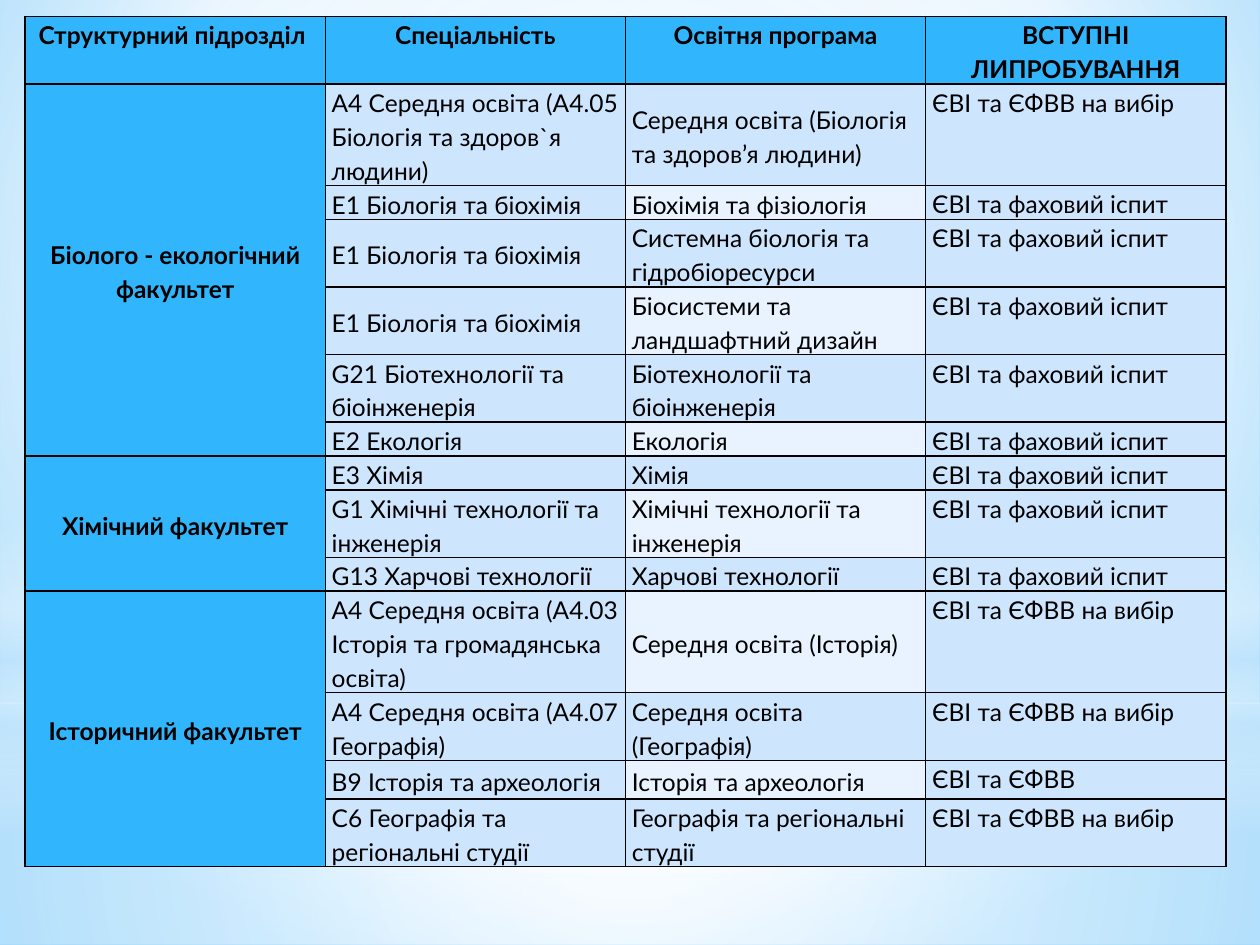
import lxml.etree
import pptx
import pptx.dml.color
import pptx.enum.shapes
import pptx.enum.text
import pptx.oxml
import pptx.oxml.ns
import pptx.util

Inches = pptx.util.Inches
SHAPE = pptx.enum.shapes.MSO_SHAPE
ANCHOR = pptx.enum.text.MSO_ANCHOR
ALIGN = pptx.enum.text.PP_ALIGN

HEADERS = ["Структурний підрозділ ", "Спеціальність", "Освітня програма", "ВСТУПНІ ЛИПРОБУВАННЯ"]
EXAM = "ЄВІ та фаховий іспит"
CHOICE = "ЄВІ та ЄФВВ на вибір"
# Faculty: (specialty, programme, entrance tests, text lines in the row)
FACULTIES = {
    "Біолого - екологічний факультет": [
        ("А4 Середня освіта (А4.05 Біологія та здоров`я людини)",
         "Середня освіта (Біологія та здоров’я людини)", CHOICE, 3),
        ("E1 Біологія та біохімія", "Біохімія та фізіологія", EXAM, 1),
        ("E1 Біологія та біохімія", "Системна біологія та гідробіоресурси", EXAM, 2),
        ("E1 Біологія та біохімія", "Біосистеми та ландшафтний дизайн", EXAM, 2),
        ("G21 Біотехнології та біоінженерія", "Біотехнології та біоінженерія", EXAM, 2),
        ("E2 Екологія", "Екологія", EXAM, 1),
    ],
    "Хімічний факультет": [
        ("E3 Хімія", "Хімія", EXAM, 1),
        ("G1 Хімічні технології та інженерія", "Хімічні технології та інженерія", EXAM, 2),
        ("G13 Харчові технології", "Харчові технології", EXAM, 1),
    ],
    "Історичний факультет": [
        ("А4 Середня освіта (А4.03 Історія та громадянська освіта)",
         "Середня освіта (Історія)", CHOICE, 3),
        ("А4 Середня освіта (А4.07 Географія)", "Середня освіта (Географія)", CHOICE, 2),
        ("В9 Історія та археологія", "Історія та археологія", "ЄВІ та ЄФВВ", 1.15),
        ("С6 Географія та регіональні студії", "Географія та регіональні студії", CHOICE, 2),
    ],
}
HEADER_LINES = 2
LEFT, TOP, WIDTH, HEIGHT = 0.2, 0.13, 9.53, 6.75
ACCENT, BAND, LIGHT_BAND, BLACK = "31B6FD", "CEE5FE", "E8F3FF", "000000"

# Gradient stops: (position %, colour, opacity %); focus: left, top, right, bottom %
CENTRE = (50, 50, 50, 50)
BACKGROUND = [(0, "B0E0FF", 100), (60, "FFFFFF", 100), (100, "6BC5FF", 100)]
GLOWS = [
    (SHAPE.RECTANGLE, 5.58, 1.92, CENTRE,
     [(0, "FFFFFF", 91), (37, "FFFFFF", 76), (100, "C6E7FC", 79)]),
    (SHAPE.RECTANGLE, 0, 5.58, CENTRE,
     [(0, "FFFFFF", 89), (48, "FFFFFF", 62), (100, "C6E7FC", 79)]),
    (SHAPE.RECTANGLE, 4.12, 2.5, None,
     [(0, "FFFFFF", 0), (29, "FFFFFF", 30), (45, "C6E7FC", 40),
      (55, "FFFFFF", 26), (65, "C6E7FC", 60), (100, "FFFFFF", 0)]),
    (SHAPE.OVAL, 1.75, 5.58, CENTRE, [(0, "FFFFFF", 100), (56, "FFFFFF", 0)]),
]


def rgb(colour):
    return pptx.dml.color.RGBColor.from_string(colour)


def set_gradient(fill, owner, stops, focus):
    """Fill with a circular gradient around focus, or a vertical one without focus."""
    fill.solid()
    fill.fore_color.rgb = rgb(stops[0][1])
    solid = owner.xpath(".//a:solidFill")[0]
    stop_xml = "".join(
        f'<a:gs pos="{pos * 1000}"><a:srgbClr val="{colour}">'
        f'<a:alpha val="{opacity * 1000}"/></a:srgbClr></a:gs>'
        for pos, colour, opacity in stops)
    if focus:
        sides = " ".join(f'{side}="{value * 1000}"' for side, value in zip("ltrb", focus))
        direction = f'<a:path path="circle"><a:fillToRect {sides}/></a:path>'
    else:
        direction = '<a:lin ang="5400000" scaled="0"/>'
    gradient = pptx.oxml.parse_xml(
        f'<a:gradFill {pptx.oxml.ns.nsdecls("a")} rotWithShape="1">'
        f'<a:gsLst>{stop_xml}</a:gsLst>{direction}</a:gradFill>')
    solid.getparent().replace(solid, gradient)


def set_borders(cell):
    properties = cell._tc.get_or_add_tcPr()
    for index, side in enumerate("LRTB"):
        properties.insert(index, pptx.oxml.parse_xml(
            f'<a:ln{side} {pptx.oxml.ns.nsdecls("a")} w="12700"><a:solidFill>'
            f'<a:srgbClr val="{BLACK}"/></a:solidFill></a:ln{side}>'))


def format_cell(cell, text, colour, heading=False, middle=True):
    cell.fill.solid()
    cell.fill.fore_color.rgb = rgb(colour)
    set_borders(cell)
    cell.margin_left = cell.margin_right = Inches(0.05)
    cell.margin_top = cell.margin_bottom = 0
    cell.vertical_anchor = ANCHOR.MIDDLE if middle else ANCHOR.TOP
    paragraph = cell.text_frame.paragraphs[0]
    paragraph.text = text
    paragraph.line_spacing = 1.15
    paragraph.alignment = ALIGN.CENTER if heading else ALIGN.LEFT
    paragraph.font.size = pptx.util.Pt(14)
    for run in paragraph.runs:
        run.font.name = "Lato"
        run.font.size = pptx.util.Pt(14)
        run.font.bold = heading
        run.font.color.rgb = rgb(BLACK)


def add_backdrop(slide):
    set_gradient(slide.background.fill, slide.background._cSld, BACKGROUND, (20, 10, 20, 60))
    for outline, top, height, focus, stops in GLOWS:
        glow = slide.shapes.add_shape(outline, 0, Inches(top), Inches(10), Inches(height))
        glow.shadow.inherit = False
        glow.line.fill.background()
        set_gradient(glow.fill, glow._element.spPr, stops, focus)


def add_admissions(slide):
    line_counts = [HEADER_LINES] + [row[-1] for rows in FACULTIES.values() for row in rows]
    admissions = slide.shapes.add_table(
        len(line_counts), len(HEADERS),
        Inches(LEFT), Inches(TOP), Inches(WIDTH), Inches(HEIGHT)).table
    for row, lines in zip(admissions.rows, line_counts):
        row.height = Inches(HEIGHT * lines / sum(line_counts))

    for column, header in enumerate(HEADERS):
        format_cell(admissions.cell(0, column), header, ACCENT, heading=True, middle=False)
    first = 1
    for faculty, rows in FACULTIES.items():
        for index, (specialty, programme, tests, _) in enumerate(rows, first):
            name = faculty if index == first else ""
            format_cell(admissions.cell(index, 0), name, ACCENT, heading=True)
            format_cell(admissions.cell(index, 1), specialty, BAND)
            format_cell(admissions.cell(index, 2), programme, BAND if index % 2 else LIGHT_BAND)
            format_cell(admissions.cell(index, 3), tests, BAND, middle=False)
        last = first + len(rows) - 1
        admissions.cell(first, 0).merge(admissions.cell(last, 0))
        first = last + 1


def main():
    deck = pptx.Presentation()
    deck.slide_width, deck.slide_height = Inches(10), Inches(7.5)
    slide = deck.slides.add_slide(deck.slide_layouts[6])
    add_backdrop(slide)
    add_admissions(slide)
    deck.save("out.pptx")


if __name__ == "__main__":
    main()
